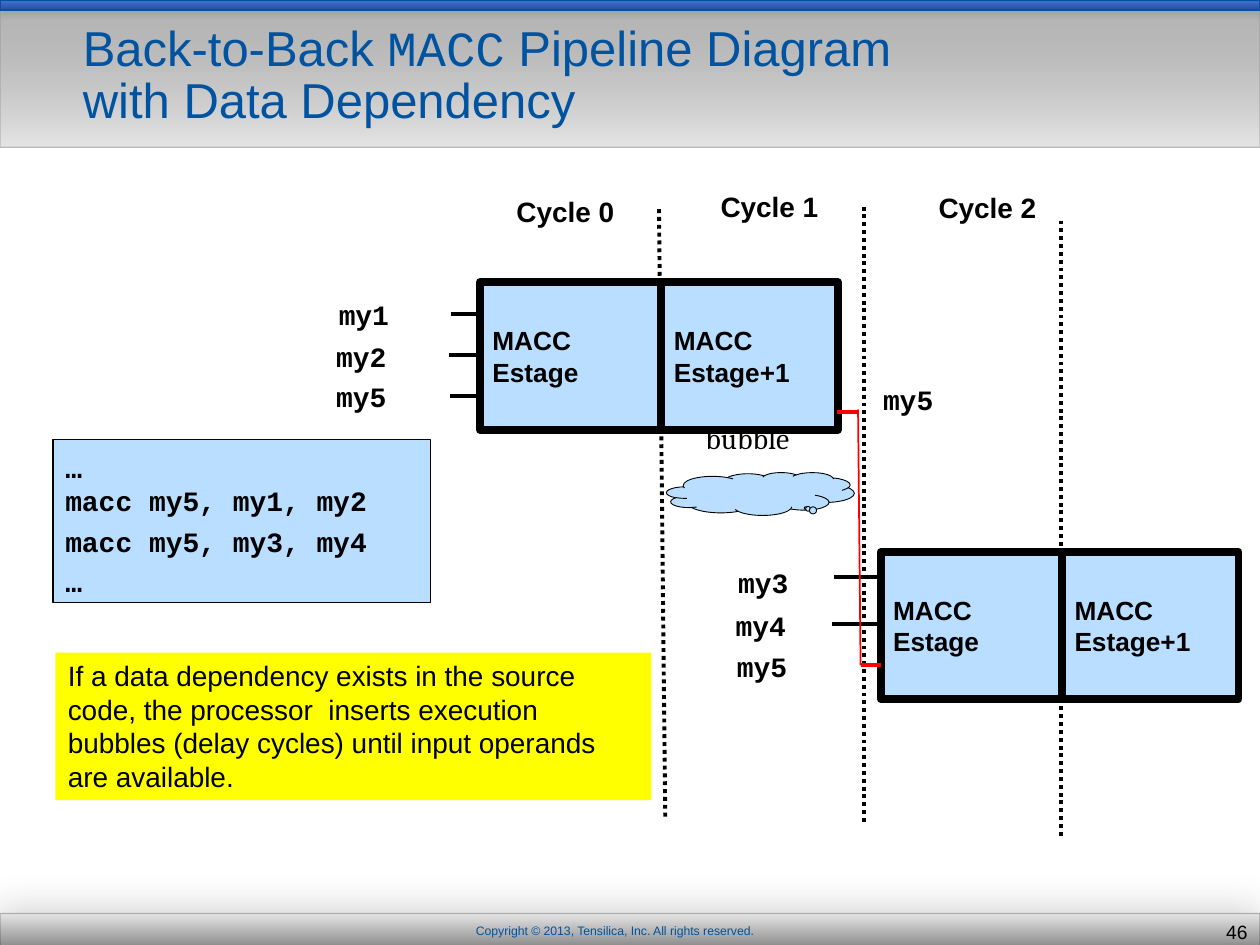
from lxml.etree import SubElement
from pptx import Presentation
from pptx.dml.color import RGBColor
from pptx.enum.dml import MSO_LINE
from pptx.enum.shapes import MSO_CONNECTOR, MSO_SHAPE
from pptx.enum.text import MSO_ANCHOR, PP_ALIGN
from pptx.oxml.ns import qn
from pptx.util import Inches, Pt

BLACK = RGBColor(0x00, 0x00, 0x00)
GREY = RGBColor(0x80, 0x80, 0x80)
DARK_GREY = RGBColor(0x7F, 0x7F, 0x7F)
LIGHT_GREY = RGBColor(0xE5, 0xE5, 0xE5)
TITLE_BLUE = RGBColor(0x00, 0x53, 0xA0)
FOOTER_BLUE = RGBColor(0x00, 0x53, 0x9E)
BAR_TOP = RGBColor(0x40, 0x74, 0xD6)
BAR_BOTTOM = RGBColor(0x2B, 0x4C, 0x9A)
BAR_LINE = RGBColor(0x00, 0x51, 0x9E)
PALE_BLUE = RGBColor(0xB9, 0xDE, 0xFF)
YELLOW = RGBColor(0xFF, 0xFF, 0x00)
RED = RGBColor(0xFF, 0x00, 0x00)
SANS, MONO, SERIF = "Arial", "Courier New", "Cambria"

# The slide is a grid of 100 columns by 75 rows
CELL = Inches(0.1)
prs = Presentation()
prs.slide_width, prs.slide_height = 100 * CELL, 75 * CELL
s = prs.slides.add_slide(prs.slide_layouts[6])


def box(col, row, cols, rows, fill=None, line=None, width=0.75, kind=MSO_SHAPE.RECTANGLE):
    """Add a flat shape placed on the grid."""
    sp = s.shapes.add_shape(kind, *(int(n * CELL) for n in (col, row, cols, rows)))
    sp.shadow.inherit = False
    if fill is not None:
        sp.fill.solid()
        sp.fill.fore_color.rgb = fill
    if line is None:
        sp.line.fill.background()
    else:
        sp.line.color.rgb = line
        sp.line.width = Pt(width)
    return sp


def write(at, lines, size, font=SANS, color=BLACK, bold=False, wrap=False,
          anchor=MSO_ANCHOR.MIDDLE, align=PP_ALIGN.LEFT):
    """Write lines into a shape, or into a new text box at a grid place."""
    if isinstance(at, tuple):
        at = s.shapes.add_textbox(*(int(n * CELL) for n in at))
    tf = at.text_frame
    tf.word_wrap, tf.vertical_anchor = wrap, anchor
    for i, text in enumerate(lines):
        p = tf.add_paragraph() if i else tf.paragraphs[0]
        p.alignment = align
        r = p.add_run()
        r.text = text
        r.font.size, r.font.name, r.font.bold = Pt(size), font, bold
        r.font.color.rgb = color
    return tf


# Header, footer and top bar: gradient, line opacity, shadow (opacity, blur, distance, angle)
bands = [
    (0, 11.7, GREY, LIGHT_GREY, 59, GREY, 42, None),
    (72.5, 3, LIGHT_GREY, DARK_GREY, 100, BLACK, 23, (36, 20.8, 3, 258)),
    (0, 0.8, BAR_TOP, BAR_BOTTOM, 100, BAR_LINE, 100, (35, 3.1, 1.8, 90)),
]
for row, rows, top, bottom, opacity, line, line_opacity, shadow in bands:
    sp = box(0, row, 100, rows, line=line)
    sp.fill.gradient()
    sp.fill.gradient_angle = 270
    for stop, color, position in zip(sp.fill.gradient_stops, (top, bottom), (0, 1)):
        stop.color.rgb, stop.position = color, position
    spPr = sp._element.spPr
    fill_color = spPr.find(qn("a:gradFill")).find(".//" + qn("a:srgbClr"))
    line_color = spPr.find(qn("a:ln")).find(".//" + qn("a:srgbClr"))
    for clr, share in ((fill_color, opacity), (line_color, line_opacity)):
        if share < 100:
            SubElement(clr, qn("a:alpha"), val=str(share * 1000))
    if shadow:
        share, blur, distance, angle = shadow
        outer = SubElement(spPr.find(qn("a:effectLst")), qn("a:outerShdw"),
                           blurRad=str(Pt(blur)), dist=str(Pt(distance)),
                           dir=str(angle * 60000), rotWithShape="0")
        clr = SubElement(outer, qn("a:srgbClr"), val=str(GREY))
        SubElement(clr, qn("a:alpha"), val=str(share * 1000))

write((29.2, 72.8, 39.2, 2.2), ["Copyright © 2013, Tensilica, Inc. All rights reserved."], 7,
      color=FOOTER_BLUE, wrap=True, anchor=MSO_ANCHOR.TOP, align=PP_ALIGN.CENTER)
write((92.1, 72.5, 7.9, 2.9), ["46"], 11, wrap=True, align=PP_ALIGN.RIGHT)

# Title
tf = write((5.6, 1.5, 85, 9.2), ["Back-to-Back "], 28, color=TITLE_BLUE, wrap=True,
           anchor=MSO_ANCHOR.BOTTOM)
p = tf.paragraphs[0]
p.line_spacing = Pt(30)
for text, font in (("MACC", MONO), (" Pipeline Diagram", SANS), ("with Data Dependency", SANS)):
    if text.startswith("with"):
        p.add_line_break()
    r = p.add_run()
    r.text = text
    r.font.size, r.font.name = Pt(28), font
    r.font.color.rgb = TITLE_BLUE

# Two pipeline stages for each instruction
for col, row in ((38.1, 22.4), (69.9, 43.8)):
    for start, cols, stage in ((col, 14.4, "Estage"), (col + 14.4, 14, "Estage+1")):
        sp = box(start, row, cols, 11.7, PALE_BLUE, BLACK, 4.5)
        write(sp, ["MACC", stage], 15, bold=True)

# Cycle headings and operand names
for i, (col, row) in enumerate(((40, 14.9), (56.2, 14.5), (73.5, 14.6))):
    write((col, row, 9.9, 3.7), [f"Cycle {i}"], 16, bold=True)
operands = [("my1", 25.9, 23.1), ("my2", 25.7, 26.4), ("my5", 25.7, 29.6), (" my5", 69.1, 28.5),
            ("my3", 57.6, 44.4), ("my4", 57.4, 47.8), ("my5", 57.5, 51)]
for name, col, row in operands:
    write((col, row, 6.1, 3.7), [name], 16, MONO, bold=True)

# Source code
sp = box(4.2, 34.9, 30, 12.9, PALE_BLUE, BLACK)
tf = write(sp, ["…", "macc my5, my1, my2", "macc my5, my3, my4", "…"], 16, MONO,
           bold=True, wrap=True)
tf.margin_top = CELL
for p in tf.paragraphs[2:]:
    p.space_before = Pt(4)

# Bubble in the idle cycle
cloud = box(52.9, 37.5, 14.9, 3.4, PALE_BLUE, BLACK, 0.5, MSO_SHAPE.CLOUD_CALLOUT)
cloud.adjustments[0], cloud.adjustments[1] = 0.24, 0.33
write((55, 32.9, 9, 3.7), ["bubble"], 17, SERIF)

# Cycle borders, operand inputs and the my5 dependency
links = [
    (52.3, 16.6, 52.8, 65, BLACK, 2.25, True),
    (68.6, 16.4, 68.6, 65.4, BLACK, 2.25, True),
    (84.2, 17.5, 84.2, 66.5, BLACK, 2.25, True),
    (38.3, 24.9, 35.8, 24.9, BLACK, 2.25, False),
    (38.1, 28.2, 35.6, 28.2, BLACK, 2.25, False),
    (38.2, 31.4, 35.7, 31.4, BLACK, 2.25, False),
    (70.1, 45.8, 66.2, 45.8, BLACK, 2.25, False),
    (69.8, 49.5, 66, 49.5, BLACK, 2.25, False),
    (66.4, 32.7, 68.1, 32.7, RED, 2.25, False),
    (69.9, 52.8, 68.3, 52.8, RED, 2.25, False),
    (68.1, 32.5, 68.3, 52.8, RED, 1, False),
]
for *ends, color, width, dotted in links:
    sp = s.shapes.add_connector(MSO_CONNECTOR.STRAIGHT, *(int(n * CELL) for n in ends))
    sp.line.color.rgb, sp.line.width = color, Pt(width)
    if dotted:
        sp.line.dash_style = MSO_LINE.ROUND_DOT
    SubElement(sp._element.spPr, qn("a:effectLst"))

# Explanation
sp = box(4.4, 51.8, 47.3, 11.7, YELLOW)
write(sp, ["If a data dependency exists in the source code, the processor  inserts execution "
           "bubbles (delay cycles) until input operands are available."], 16,
      wrap=True, anchor=MSO_ANCHOR.TOP)

prs.save("out.pptx")
